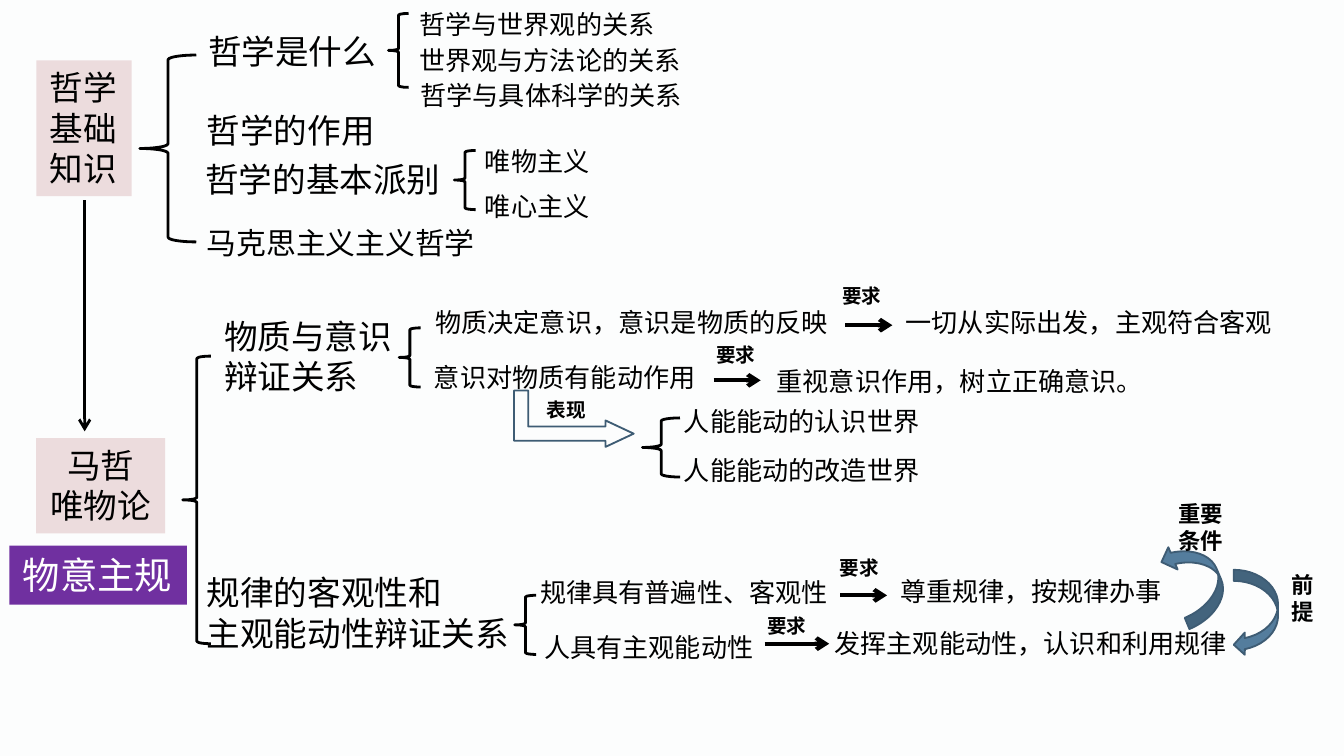
"""Build a mind-map slide on the foundations of philosophy and materialism."""
from typing import NamedTuple

import lxml.etree
import pptx
import pptx.dml.color
import pptx.enum.shapes
import pptx.enum.text
import pptx.oxml.ns
import pptx.slide
import pptx.util

PX = 9144
SLIDE_WIDTH = 1000
FONT = "Arial"
COLORS = {
    "background": "FCFDFD",
    "topic": "ECDCDD",
    "summary": "7030A0",
    "ink": "000000",
    "white": "FFFFFF",
    "arrow": "547D9D",
    "outline": "3E5C74",
}
SHAPES = pptx.enum.shapes.MSO_SHAPE


class Label(NamedTuple):
    left: int
    top: int
    width: int
    height: int
    text: str
    size: float = 14
    bold: bool = False
    color: str = "ink"
    fill: str = ""
    centered: bool = False


class Brace(NamedTuple):
    left: int
    top: int
    width: int
    height: int


class Arrow(NamedTuple):
    start_x: int
    start_y: int
    end_x: int
    end_y: int
    weight: float = 2.25


class BlockArrow(NamedTuple):
    kind: SHAPES
    left: int
    top: int
    width: int
    height: int
    rotation: float = 0
    fill: str = "arrow"
    adjustments: tuple = ()


BRACES = [
    Brace(104, 41, 42, 139),
    Brace(289, 10, 15, 55),
    Brace(338, 112, 16, 44),
    Brace(297, 244, 16, 44),
    Brace(136, 265, 21, 214),
    Brace(383, 443, 16, 44),
    Brace(478, 311, 28, 44),
]

ARROWS = [
    Arrow(63, 149, 63, 321, 1.5),
    Arrow(629, 242, 664, 242),
    Arrow(531, 283, 566, 283),
    Arrow(625, 443, 660, 443),
    Arrow(569, 479, 617, 479),
]

BLOCK_ARROWS = [
    BlockArrow(SHAPES.BENT_UP_ARROW, 406, 267, 42, 89, 90, "", (0.25, 0.234, 0.5)),
    BlockArrow(SHAPES.CURVED_LEFT_ARROW, 918, 424, 33, 64),
    BlockArrow(SHAPES.CURVED_UP_ARROW, 858, 414, 63, 36, 247.3),
]

TOPICS = [
    Label(27, 45, 71, 101, "哲学\n基础\n知识", 18, fill="topic"),
    Label(27, 326, 96, 71, "马哲\n唯物论", 18, fill="topic", centered=True),
    Label(7, 406, 132, 44, "物意主规", 20, color="white", fill="summary"),
]

BRANCHES = [
    Label(145, 18, 146, 40, "哲学是什么", 18),
    Label(144, 77, 146, 40, "哲学的作用", 18),
    Label(143, 113, 197, 40, "哲学的基本派别", 18),
    Label(144, 162, 222, 37, "马克思主义主义哲学", 16),
    Label(157, 230, 146, 71, "物质与意识\n辩证关系", 18),
    Label(144, 421, 247, 71, "规律的客观性和\n主观能动性辩证关系", 18),
]

DETAILS = [
    Label(302, 1, 197, 34, "哲学与世界观的关系"),
    Label(302, 28, 217, 34, "世界观与方法论的关系"),
    Label(303, 54, 217, 34, "哲学与具体科学的关系"),
    Label(351, 103, 99, 34, "唯物主义"),
    Label(351, 137, 99, 34, "唯心主义"),
    Label(314, 223, 315, 34, "物质决定意识，意识是物质的反映"),
    Label(664, 223, 295, 34, "一切从实际出发，主观符合客观"),
    Label(313, 264, 217, 34, "意识对物质有能动作用"),
    Label(568, 267, 295, 34, "重视意识作用，树立正确意识。"),
    Label(499, 297, 197, 34, "人能能动的认识世界"),
    Label(499, 333, 197, 34, "人能能动的改造世界"),
    Label(392, 424, 236, 34, "规律具有普遍性、客观性"),
    Label(660, 423, 217, 34, "尊重规律，按规律办事"),
    Label(395, 465, 177, 34, "人具有主观能动性"),
    Label(611, 462, 315, 34, "发挥主观能动性，认识和利用规律"),
]

REQUIREMENTS = [
    Label(left, top, 50, 28, "要求", 10.5, True)
    for left, top in [(617, 206), (523, 250), (615, 409), (561, 452)]
]

RELATIONS = [
    Label(397, 291, 51, 29, "表现", 10.5, True),
    Label(951, 420, 37, 50, "前\n提", 12, True),
    Label(867, 367, 54, 50, "重要\n条件", 12, True),
]


def rgb(name: str) -> pptx.dml.color.RGBColor:
    """Return a named colour."""
    return pptx.dml.color.RGBColor.from_string(COLORS[name])


def emu(*lengths: int) -> list[int]:
    """Turn px lengths into EMU."""
    return [length * PX for length in lengths]


def draw_label(slide: pptx.slide.Slide, label: Label) -> None:
    """Draw one text box, with a fill if it has one."""
    shape = slide.shapes.add_textbox(*emu(*label[:4]))
    if label.fill:
        shape.fill.solid()
        shape.fill.fore_color.rgb = rgb(label.fill)
    frame = shape.text_frame
    frame.word_wrap = False
    frame.auto_size = pptx.enum.text.MSO_AUTO_SIZE.SHAPE_TO_FIT_TEXT
    frame.text = label.text
    for paragraph in frame.paragraphs:
        if label.centered:
            paragraph.alignment = pptx.enum.text.PP_ALIGN.CENTER
        for run in paragraph.runs:
            run.font.name = FONT
            run.font.size = pptx.util.Pt(label.size)
            run.font.bold = label.bold
            run.font.color.rgb = rgb(label.color)


def draw_brace(slide: pptx.slide.Slide, brace: Brace) -> None:
    """Draw one left brace."""
    shape = slide.shapes.add_shape(SHAPES.LEFT_BRACE, *emu(*brace))
    shape.shadow.inherit = False
    shape.fill.background()
    shape.line.color.rgb = rgb("ink")
    shape.line.width = pptx.util.Pt(1.5)


def draw_arrow(slide: pptx.slide.Slide, arrow: Arrow) -> None:
    """Draw one straight line with an open arrowhead at its end."""
    connector = slide.shapes.add_connector(
        pptx.enum.shapes.MSO_CONNECTOR.STRAIGHT, *emu(*arrow[:4])
    )
    connector.line.color.rgb = rgb("ink")
    connector.line.width = pptx.util.Pt(arrow.weight)
    qualified = pptx.oxml.ns.qn
    properties = connector.element.spPr
    line = properties.find(qualified("a:ln"))
    lxml.etree.SubElement(line, qualified("a:tailEnd"), type="arrow")
    lxml.etree.SubElement(properties, qualified("a:effectLst"))


def draw_block_arrow(slide: pptx.slide.Slide, arrow: BlockArrow) -> None:
    """Draw one bent or curved block arrow."""
    shape = slide.shapes.add_shape(arrow.kind, *emu(*arrow[1:5]))
    shape.shadow.inherit = False
    shape.rotation = arrow.rotation
    for index, value in enumerate(arrow.adjustments):
        shape.adjustments[index] = value
    if arrow.fill:
        shape.fill.solid()
        shape.fill.fore_color.rgb = rgb(arrow.fill)
    else:
        shape.fill.background()
    shape.line.color.rgb = rgb("outline")
    shape.line.width = pptx.util.Pt(1)


def main() -> None:
    """Build and save the presentation."""
    presentation = pptx.Presentation()
    presentation.slide_width = SLIDE_WIDTH * PX
    presentation.slide_height = SLIDE_WIDTH * PX * 9 // 16
    slide = presentation.slides.add_slide(presentation.slide_layouts[6])
    slide.background.fill.solid()
    slide.background.fill.fore_color.rgb = rgb("background")
    for brace in BRACES:
        draw_brace(slide, brace)
    for arrow in ARROWS:
        draw_arrow(slide, arrow)
    for block_arrow in BLOCK_ARROWS:
        draw_block_arrow(slide, block_arrow)
    for label in TOPICS + BRANCHES + DETAILS + REQUIREMENTS + RELATIONS:
        draw_label(slide, label)
    presentation.save("out.pptx")


if __name__ == "__main__":
    main()
